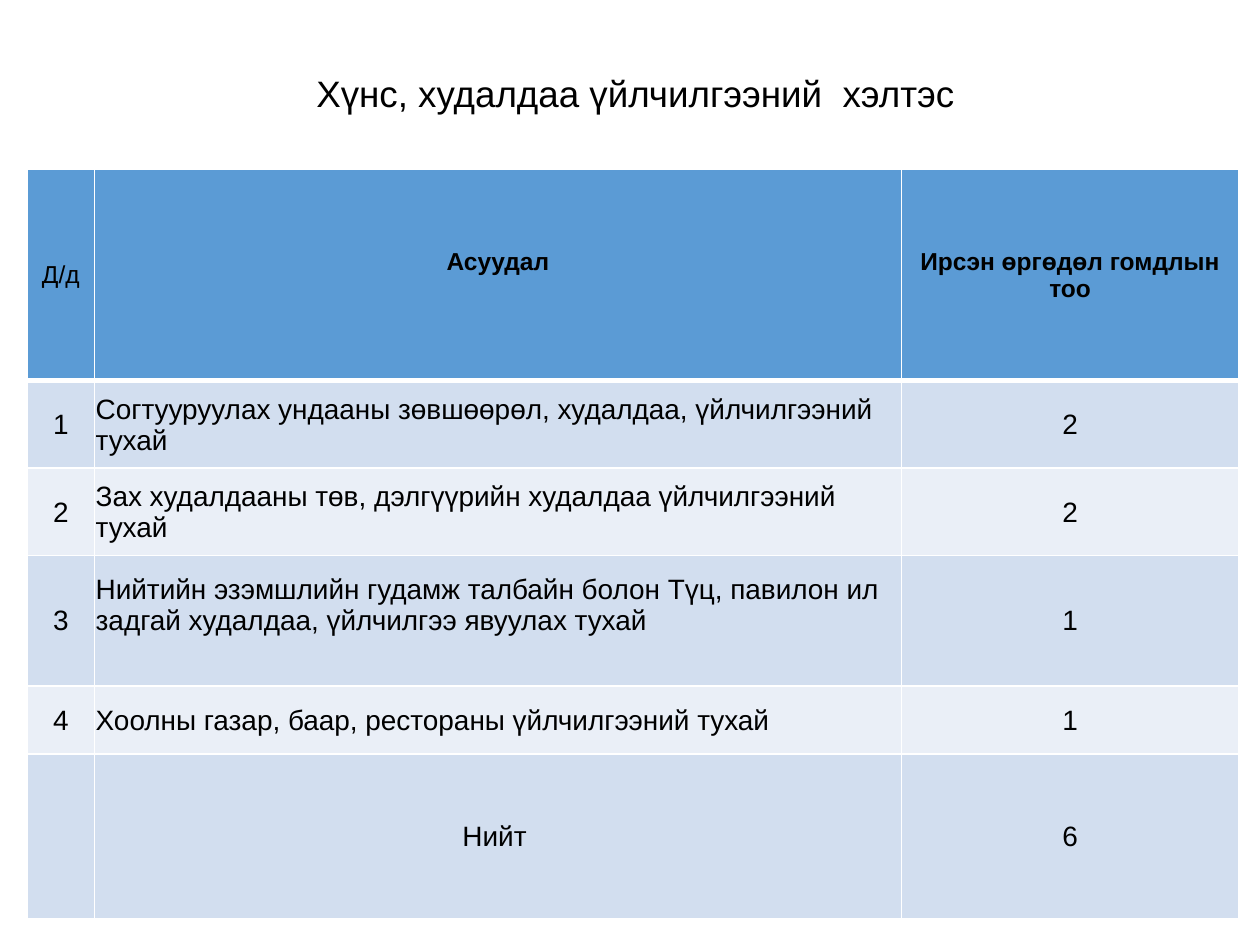
from lxml import etree
from pptx import Presentation
from pptx.dml.color import RGBColor
from pptx.enum import text
from pptx.oxml import ns
from pptx.util import Pt

# Content
TITLE = "Хүнс, худалдаа үйлчилгээний  хэлтэс"
HEADER = ("Д/д", "Асуудал", "Ирсэн өргөдөл гомдлын тоо")
ISSUES = [
    ("1", "Согтууруулах ундааны зөвшөөрөл, худалдаа, үйлчилгээний тухай", "2"),
    ("2", "Зах худалдааны төв, дэлгүүрийн худалдаа үйлчилгээний тухай", "2"),
    ("3", "Нийтийн эзэмшлийн гудамж талбайн болон Түц, павилон ил задгай "
          "худалдаа, үйлчилгээ явуулах тухай", "1"),
    ("4", "Хоолны газар, баар, рестораны үйлчилгээний тухай", "1"),
]
TOTAL = ("", "Нийт", "6")
ROWS = [HEADER, *ISSUES, TOTAL]

# Layout in points
COLUMN_WIDTHS = (38.5, 461, 193)
ROW_HEIGHTS = (121, 50, 50, 74.5, 39, 94)
TABLE_LEFT, TABLE_TOP = 15.5, 96.5
CELL_MARGIN = 0.7
BOTTOM_MARGINS = {(0, 1): 15, (3, 1): 18}   # cells whose text sits higher
RIGHT_MARGINS = {(5, 1): 4.5}

THEME = {
    "font": "Arial", "text": "000000", "border": "FFFFFF",
    "header": "5B9BD5", "bands": ("D2DEEF", "EAEFF7"),
    "title_size": 21, "header_size": 14, "body_size": 16,
}


def format_paragraph(paragraph, size, alignment, bold=False):
    paragraph.alignment = alignment
    font = paragraph.font
    font.name, font.size, font.bold = THEME["font"], Pt(size), bold
    font.color.rgb = RGBColor.from_string(THEME["text"])


def add_borders(cell, bottom_width):
    properties = cell._tc.get_or_add_tcPr()
    widths = {"lnL": 1, "lnR": 1, "lnT": 1, "lnB": bottom_width}
    for position, (side, width) in enumerate(widths.items()):
        line = etree.Element(ns.qn(f"a:{side}"), w=str(Pt(width)))
        fill = etree.SubElement(line, ns.qn("a:solidFill"))
        etree.SubElement(fill, ns.qn("a:srgbClr"), val=THEME["border"])
        properties.insert(position, line)


def format_cell(cell, row, column):
    is_header = row == 0
    cell.text = ROWS[row][column]
    cell.vertical_anchor = text.MSO_ANCHOR.MIDDLE
    cell.margin_left = cell.margin_top = Pt(CELL_MARGIN)
    cell.margin_right = Pt(RIGHT_MARGINS.get((row, column), CELL_MARGIN))
    cell.margin_bottom = Pt(BOTTOM_MARGINS.get((row, column), 0))
    is_issue = column == 1 and 0 < row <= len(ISSUES)
    format_paragraph(
        cell.text_frame.paragraphs[0],
        THEME["header_size"] if is_header else THEME["body_size"],
        text.PP_ALIGN.LEFT if is_issue else text.PP_ALIGN.CENTER,
        bold=is_header and column > 0,
    )
    color = THEME["header"] if is_header else THEME["bands"][(row - 1) % 2]
    cell.fill.solid()
    cell.fill.fore_color.rgb = RGBColor.from_string(color)
    add_borders(cell, 3 if is_header else 1)


def main():
    presentation = Presentation()
    presentation.slide_width, presentation.slide_height = Pt(720), Pt(540)
    slide = presentation.slides.add_slide(presentation.slide_layouts[5])

    # Title, set slightly right of centre by its left inset
    title = slide.shapes.title
    title.left, title.top, title.width, title.height = Pt(10), Pt(33), Pt(689), Pt(43)
    frame = title.text_frame
    frame.text = TITLE
    frame.vertical_anchor = text.MSO_ANCHOR.MIDDLE
    frame.margin_left = Pt(24.5)
    format_paragraph(frame.paragraphs[0], THEME["title_size"], text.PP_ALIGN.CENTER)
    frame.paragraphs[0].line_spacing = 0.9

    # Table of complaints
    table = slide.shapes.add_table(
        len(ROWS), len(HEADER), Pt(TABLE_LEFT), Pt(TABLE_TOP),
        Pt(sum(COLUMN_WIDTHS)), Pt(sum(ROW_HEIGHTS))).table
    table.first_row = table.horz_banding = False
    for column, width in zip(table.columns, COLUMN_WIDTHS):
        column.width = Pt(width)
    for row, height in enumerate(ROW_HEIGHTS):
        table.rows[row].height = Pt(height)
        for column in range(len(HEADER)):
            format_cell(table.cell(row, column), row, column)

    presentation.save("out.pptx")


if __name__ == "__main__":
    main()
